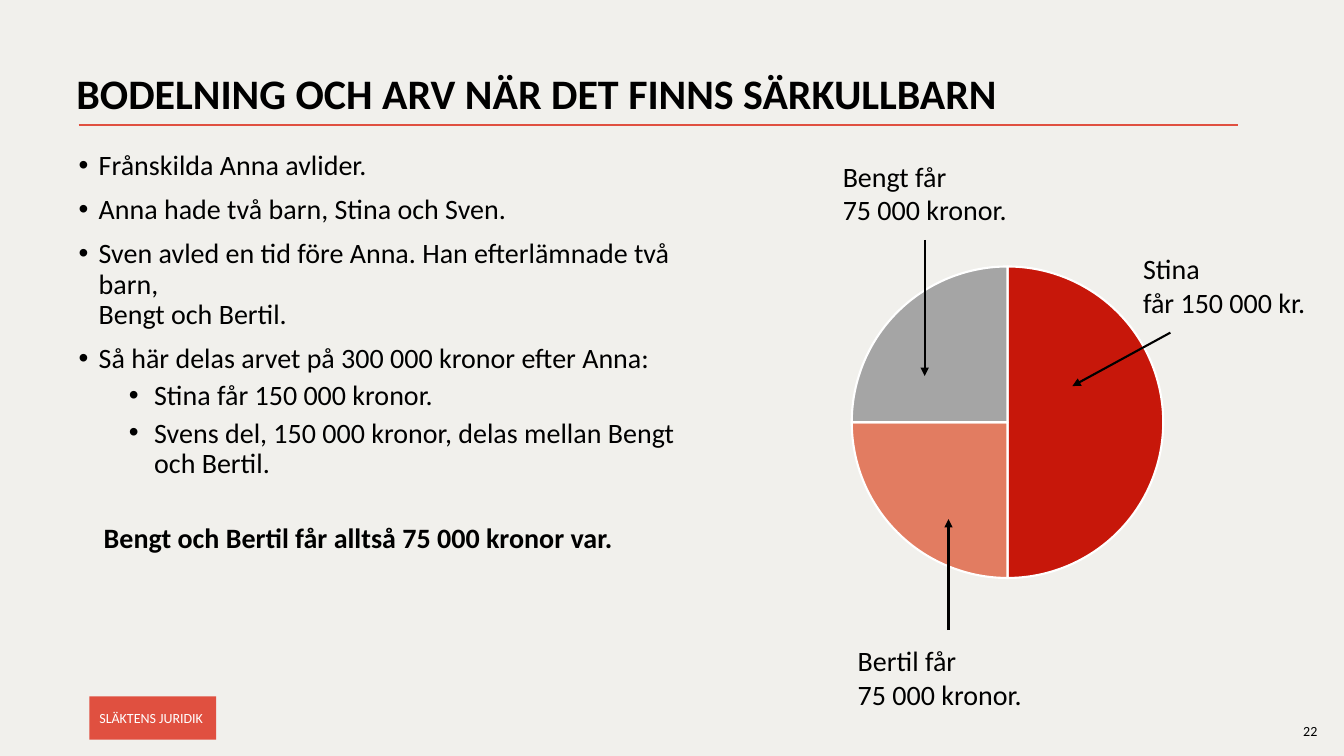
from lxml import etree
from pptx import Presentation
from pptx.chart.data import CategoryChartData
from pptx.dml.color import RGBColor
from pptx.enum.chart import XL_CHART_TYPE as ChartType
from pptx.enum.shapes import MSO_CONNECTOR as Connector, MSO_SHAPE as Shape
from pptx.enum.text import MSO_ANCHOR as Anchor, PP_ALIGN as Align
from pptx.oxml import parse_xml
from pptx.oxml.ns import nsdecls, qn
from pptx.util import Pt

FONT = "Calibri"
BLACK, WHITE, RED = "000000", "FFFFFF", "E05040"
BACKGROUND = "F1F0EC"

HEIRS = [("1", 50, "C7170A"), ("2", 25, "E27C61"), ("3", 25, "A5A5A5")]
# Text, level
BULLETS = [
    ("Frånskilda Anna avlider.", 0),
    ("Anna hade två barn, Stina och Sven.", 0),
    ("Sven avled en tid före Anna. Han efterlämnade två barn,\vBengt och Bertil.", 0),
    ("Så här delas arvet på 300 000 kronor efter Anna:", 0),
    ("Stina får 150 000 kronor.", 1),
    ("Svens del, 150 000 kronor, delas mellan Bengt och Bertil.", 1),
]
# Left indent, hanging, space before, for each level
LEVELS = [(14.4, 14.4, 10), (54, 18, 5)]
# Label, its box, arrow start and end
CALLOUTS = [
    ("Bengt får\v75 000 kronor.", (602, 113.8, 140, 48), (660.5, 171.4), (660.5, 268.6)),
    ("Bertil får\v75 000 kronor.", (612.7, 460, 160, 48), (677.5, 450), (677.5, 370.8)),
    ("Stina\vfår 150 000 kr.", (816.5, 180, 140, 48), (836, 237.6), (766, 275.8)),
]


def color(value):
    return RGBColor.from_string(value)


def points(values):
    return [Pt(value) for value in values]


def format_runs(paragraph, size, font_color=BLACK, bold=False):
    for run in paragraph.runs:
        run.font.name = FONT
        run.font.size = Pt(size)
        run.font.bold = bold
        run.font.color.rgb = color(font_color)


def add_text(slide, text, box, size, bold=False, spacing=1.0, margins=(7.2, 3.6)):
    frame = slide.shapes.add_textbox(*points(box)).text_frame
    frame.word_wrap = True
    frame.margin_left = frame.margin_right = Pt(margins[0])
    frame.margin_top = frame.margin_bottom = Pt(margins[1])
    frame.text = text
    frame.paragraphs[0].line_spacing = spacing
    format_runs(frame.paragraphs[0], size, bold=bold)
    return frame


def add_bullets(slide, items, box):
    frame = add_text(slide, "", box, 20)
    for index, (text, level) in enumerate(items):
        paragraph = frame.add_paragraph() if index else frame.paragraphs[0]
        left, hanging, before = LEVELS[level]
        paragraph.text = text
        paragraph.level = level
        properties = paragraph._p.get_or_add_pPr()
        properties.set("marL", str(Pt(left)))
        properties.set("indent", str(-Pt(hanging)))
        etree.SubElement(properties, qn("a:buFont")).set("typeface", "Arial")
        etree.SubElement(properties, qn("a:buChar")).set("char", "•")
        paragraph.line_spacing = 0.9
        paragraph.space_before = Pt(before if index else 0)
        format_runs(paragraph, 20)


def add_line(slide, start, end, line_color=BLACK, arrow=False):
    connector = slide.shapes.add_connector(Connector.STRAIGHT, *points(start + end))
    connector.line.color.rgb = color(line_color)
    connector.line.width = Pt(1.5)
    if arrow:
        line = connector.line._get_or_add_ln()
        etree.SubElement(line, qn("a:tailEnd")).set("type", "triangle")
    etree.SubElement(connector._element.spPr, qn("a:effectLst"))


def add_tag(slide, text, box):
    shape = slide.shapes.add_shape(Shape.RECTANGLE, *points(box))
    shape.shadow.inherit = False
    shape.fill.solid()
    shape.fill.fore_color.rgb = color(RED)
    shape.line.fill.background()
    frame = shape.text_frame
    frame.word_wrap = False
    frame.vertical_anchor = Anchor.MIDDLE
    frame.margin_left, frame.margin_right = Pt(7.2), Pt(3)
    frame.text = text
    frame.paragraphs[0].alignment = Align.LEFT
    format_runs(frame.paragraphs[0], 10, WHITE)


def add_pie(slide, heirs, box):
    data = CategoryChartData()
    data.categories = [name for name, _, _ in heirs]
    data.add_series("Series 1", [share for _, share, _ in heirs])
    chart = slide.shapes.add_chart(ChartType.PIE, *points(box), data).chart
    chart.has_legend = chart.has_title = False
    chart.font.name = FONT
    chart.font.size = Pt(10)
    chart.font.color.rgb = color(BLACK)
    plot = chart.plots[0]
    plot.vary_by_categories = False
    for index, (_, _, fill) in enumerate(heirs):
        slice_format = plot.series[0].points[index].format
        slice_format.fill.solid()
        slice_format.fill.fore_color.rgb = color(fill)
        slice_format.line.color.rgb = color(WHITE)
        slice_format.line.width = Pt(1.5)
    # Centre the pie at a fixed size in its frame
    width, height = 0.714, 0.92
    layout = parse_xml(
        f'<c:layout {nsdecls("c")}><c:manualLayout><c:layoutTarget val="inner"/>'
        '<c:xMode val="edge"/><c:yMode val="edge"/>'
        f'<c:x val="{(1 - width) / 2:.3f}"/><c:y val="{(1 - height) / 2:.3f}"/>'
        f'<c:w val="{width}"/><c:h val="{height}"/></c:manualLayout></c:layout>')
    plot_area = chart._chartSpace.chart.plotArea
    for old_layout in plot_area.findall(qn("c:layout")):
        plot_area.remove(old_layout)
    plot_area.insert(0, layout)


def main():
    presentation = Presentation()
    presentation.slide_width, presentation.slide_height = Pt(960), Pt(540)
    slide = presentation.slides.add_slide(presentation.slide_layouts[6])
    slide.background.fill.solid()
    slide.background.fill.fore_color.rgb = color(BACKGROUND)

    # Heading and footer
    add_text(slide, "22", (923.8, 512.6, 36, 19.4), 10)
    add_line(slide, (56.2, 89.3), (884.2, 89.3), RED)
    add_text(slide, "BODELNING OCH ARV NÄR DET FINNS SÄRKULLBARN",
             (47.5, 49, 828, 40), 30, bold=True, spacing=0.9)
    add_tag(slide, "SLÄKTENS JURIDIK", (63.9, 497.4, 90.5, 31))

    # Shares of the inheritance
    add_pie(slide, HEIRS, (563.8, 180.7, 311.8, 241.9))
    for text, box, start, end in CALLOUTS:
        add_line(slide, start, end, arrow=True)
        add_text(slide, text, box, 20, margins=(0, 0))

    # Explanation and conclusion
    add_bullets(slide, BULLETS, (49, 104.4, 445.7, 242))
    add_text(slide, "Bengt och Bertil får alltså 75 000 kronor var.",
             (67, 368.6, 380, 31.7), 20, bold=True)
    presentation.save("out.pptx")


if __name__ == "__main__":
    main()
